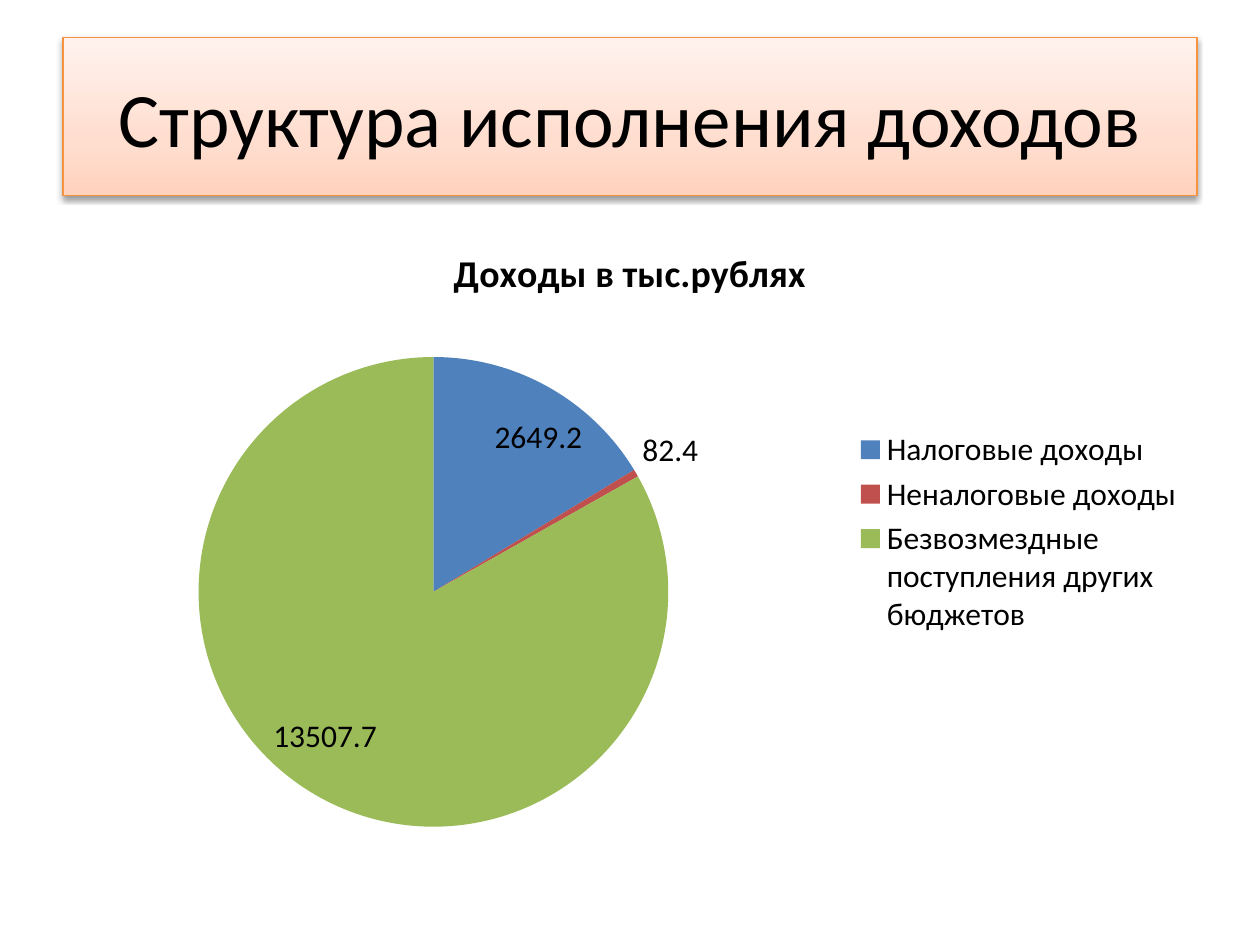
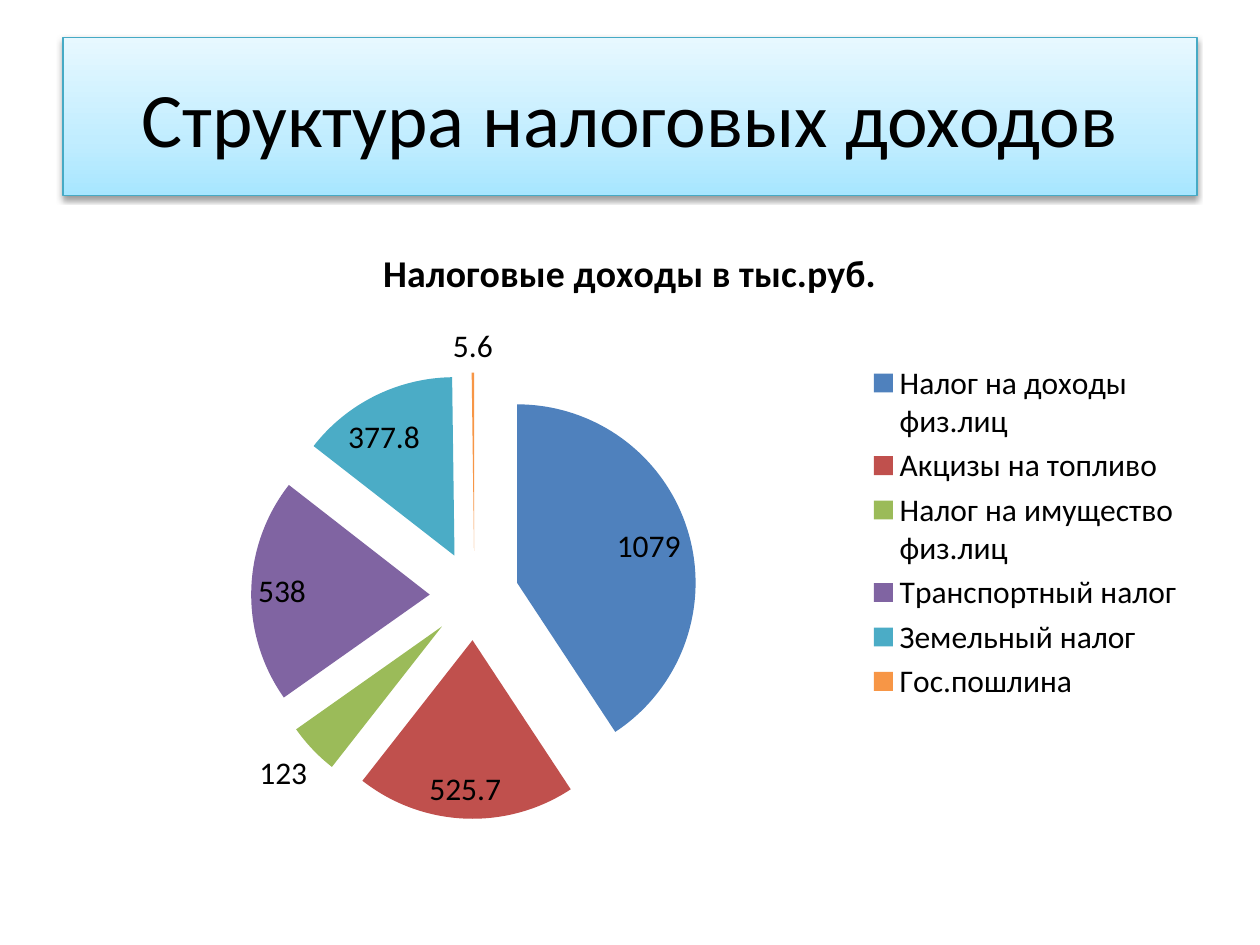
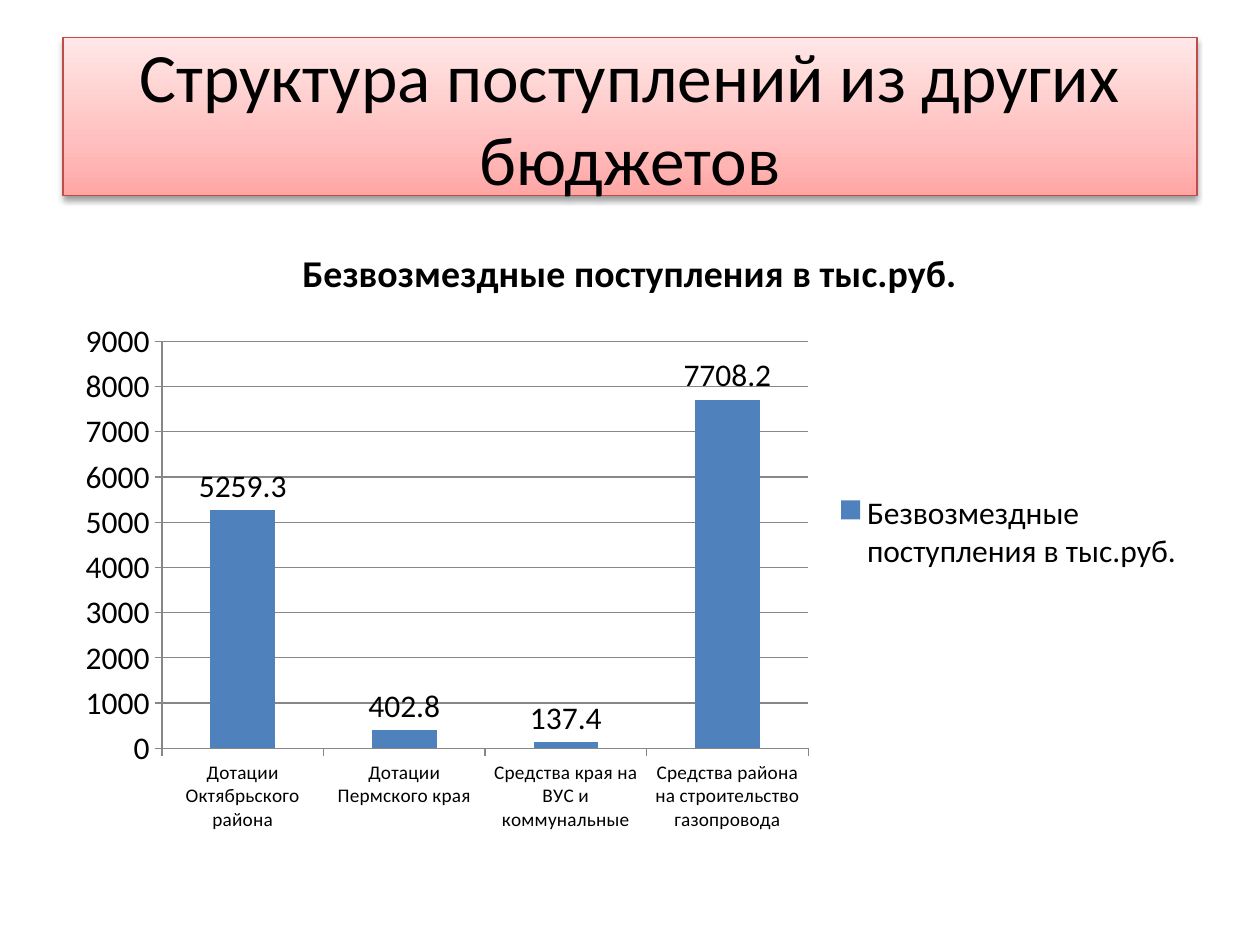
from lxml import etree
from pptx import Presentation
from pptx.chart.data import CategoryChartData
from pptx.dml.color import RGBColor
from pptx.enum.chart import XL_CHART_TYPE, XL_LEGEND_POSITION, XL_TICK_MARK
from pptx.enum.shapes import MSO_SHAPE
from pptx.enum.text import MSO_ANCHOR, PP_ALIGN
from pptx.oxml import parse_xml
from pptx.oxml.ns import nsdecls, qn
from pptx.util import Inches, Pt

PIE, COLUMN = XL_CHART_TYPE.PIE, XL_CHART_TYPE.COLUMN_CLUSTERED
RIGHT, OUT = XL_LEGEND_POSITION.RIGHT, XL_TICK_MARK.OUTSIDE
RECT, MIDDLE, CENTER = MSO_SHAPE.RECTANGLE, MSO_ANCHOR.MIDDLE, PP_ALIGN.CENTER

WIDTH, HEIGHT = Inches(10), Inches(7.5)
BAND = (0.05, 0.04, 0.9, 1 / 6)
BODY = (0.05, 0.2333, 0.9, 0.66)
FONT = "Calibri"
BLACK = RGBColor(0, 0, 0)
GREY = RGBColor(0x87, 0x87, 0x87)
COLORS = [RGBColor.from_string(c) for c in
          ("4F81BD", "C0504D", "9BBB59", "8064A2", "4BACC6", "F79646")]
STOPS = (0, 35, 100)
# Each tint: three gradient colours from bottom to top, then the outline
ORANGE = [RGBColor.from_string(c) for c in ("FFD2BD", "FFDED0", "FFF2ED", "F69240")]
BLUE = [RGBColor.from_string(c) for c in ("A7E6FF", "C1EDFF", "E7F8FF", "46AAC5")]
RED = [RGBColor.from_string(c) for c in ("FFA6A5", "FFC0BF", "FFE7E7", "BF4C48")]

SHADOW = (
    f'<a:outerShdw {nsdecls("a")} blurRad="{Pt(3.1)}" dist="{Pt(1.6)}" '
    'dir="5400000" rotWithShape="0"><a:srgbClr val="000000">'
    '<a:alpha val="38000"/></a:srgbClr></a:outerShdw>')

SLIDES = [
    {"title": "Структура исполнения доходов", "size": 44, "tint": ORANGE,
     "kind": PIE, "name": "Доходы в тыс.рублях", "explode": 0,
     "data": {"Налоговые доходы": 2649.2,
              "Неналоговые доходы": 82.4,
              "Безвозмездные поступления других бюджетов": 13507.7}},
    {"title": "Структура налоговых доходов", "size": 44, "tint": BLUE,
     "kind": PIE, "name": "Налоговые доходы в тыс.руб.", "explode": 25,
     "data": {"Налог на доходы физ.лиц": 1079,
              "Акцизы на топливо": 525.7,
              "Налог на имущество физ.лиц": 123,
              "Транспортный налог": 538,
              "Земельный налог": 377.8,
              "Гос.пошлина": 5.6}},
    {"title": "Структура поступлений из других бюджетов", "size": 39.6, "tint": RED,
     "kind": COLUMN, "name": "Безвозмездные поступления в тыс.руб.",
     "data": {"Дотации Октябрьского района": 5259.3,
              "Дотации Пермского края": 402.8,
              "Средства края на ВУС и коммунальные": 137.4,
              "Средства района на строительство газопровода": 7708.2}},
]


def place(box):
    """Turn shares of the slide into lengths."""
    x, y, w, h = box
    return [round(v) for v in (x * WIDTH, y * HEIGHT, w * WIDTH, h * HEIGHT)]


def style(font, size, bold=False):
    form = {"name": FONT, "size": Pt(size), "bold": bold}
    for key, value in form.items():
        setattr(font, key, value)
    font.color.rgb = BLACK


def shade(shape, tint):
    """Fill with three gradient stops, outline, and drop a soft shadow."""
    shape.fill.gradient()
    shape.fill.gradient_angle = 90
    stops = shape.element.spPr.find(".//" + qn("a:gsLst"))
    for stop in list(stops):
        stops.remove(stop)
    for pos, color in zip(STOPS, tint):
        stop = etree.SubElement(stops, qn("a:gs"), pos=str(pos * 1000))
        etree.SubElement(stop, qn("a:srgbClr"), val=str(color))
    shape.line.color.rgb = tint[-1]
    shape.line.width = Pt(0.75)
    shape.shadow.inherit = False
    shape.element.spPr.find(qn("a:effectLst")).append(parse_xml(SHADOW))


def add_band(slide, box, text, size, tint):
    band = slide.shapes.add_shape(RECT, *place(box))
    shade(band, tint)
    frame = band.text_frame
    frame.word_wrap = True
    frame.vertical_anchor = MIDDLE
    para = frame.paragraphs[0]
    para.alignment = CENTER
    run = para.add_run()
    run.text = text
    style(run.font, size)


def add_graph(slide, box, kind, name, data):
    """Add a chart with the title, legend and labels that all slides share."""
    source = CategoryChartData()
    source.categories = list(data)
    source.add_series(name, list(data.values()))
    chart = slide.shapes.add_chart(kind, *place(box), source).chart
    style(chart.font, 18)
    chart.has_title = True
    run = chart.chart_title.text_frame.paragraphs[0].add_run()
    run.text = name
    style(run.font, 21.6, True)
    chart.chart_title.include_in_layout = False
    chart.has_legend = True
    chart.legend.position = RIGHT
    chart.legend.include_in_layout = False
    chart.plots[0].series[0].data_labels.show_value = True
    return chart


def paint(fill, color):
    fill.solid()
    fill.fore_color.rgb = color


def dress_pie(chart, count, explode):
    plot = chart.plots[0]
    plot.vary_by_categories = True
    series = plot.series[0]
    for i in range(count):
        paint(series.points[i].format.fill, COLORS[i])
    if explode:
        part = etree.Element(qn("c:explosion"), val=str(explode))
        series._element.find(qn("c:tx")).addnext(part)


def dress_bars(chart):
    plot = chart.plots[0]
    plot.vary_by_categories = False
    plot.gap_width = 150
    paint(plot.series[0].format.fill, COLORS[0])
    cats, vals = chart.category_axis, chart.value_axis
    style(cats.tick_labels.font, 11)
    vals.has_major_gridlines = True
    for axis in (cats, vals):
        axis.major_tick_mark = OUT
    for part in (cats, vals, vals.major_gridlines):
        part.format.line.color.rgb = GREY
        part.format.line.width = Pt(0.75)


def add_page(deck, page):
    slide = deck.slides.add_slide(deck.slide_layouts[6])
    add_band(slide, BAND, page["title"], page["size"], page["tint"])
    chart = add_graph(slide, BODY, page["kind"], page["name"], page["data"])
    if page["kind"] == PIE:
        dress_pie(chart, len(page["data"]), page["explode"])
    else:
        dress_bars(chart)


def main():
    deck = Presentation()
    deck.slide_width, deck.slide_height = WIDTH, HEIGHT
    for page in SLIDES:
        add_page(deck, page)
    deck.save("out.pptx")


if __name__ == "__main__":
    main()
